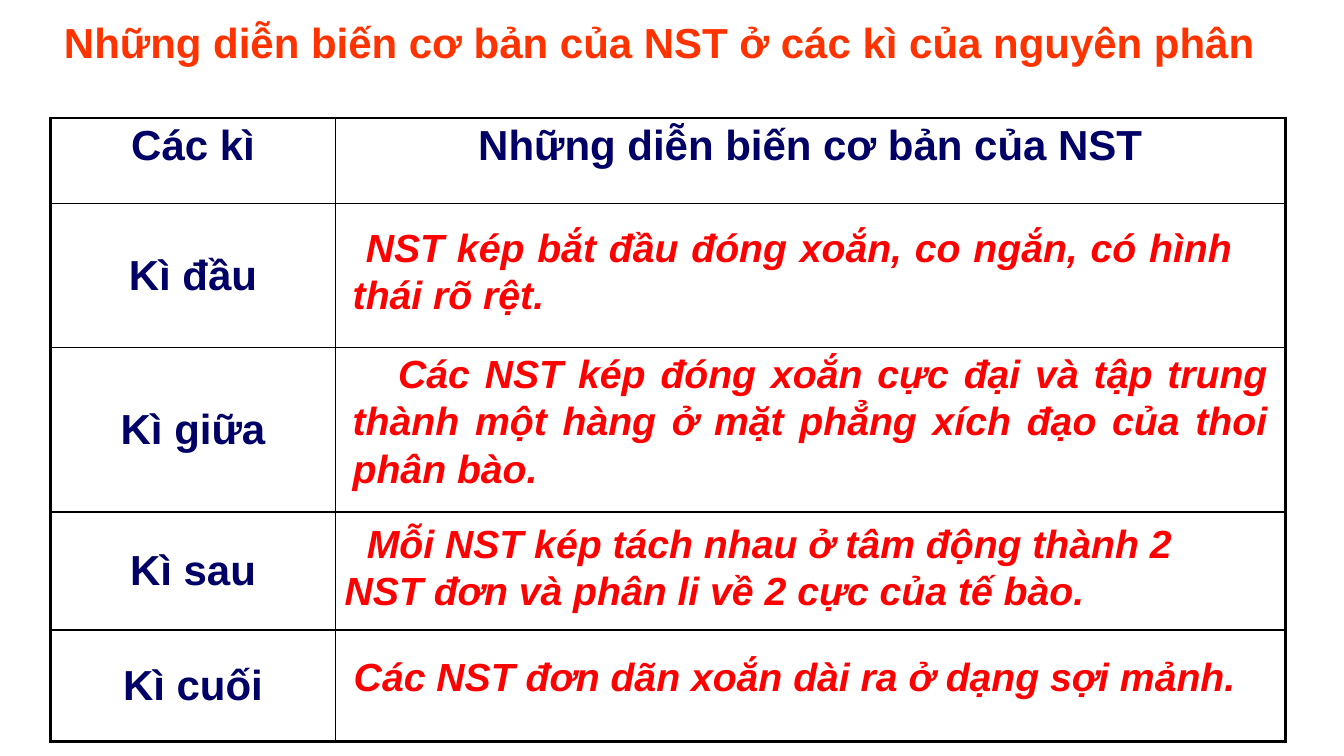
from dataclasses import dataclass

from lxml.etree import SubElement
from pptx import Presentation
from pptx.dml.color import RGBColor as RGB
from pptx.enum.text import MSO_ANCHOR as Anchor, PP_ALIGN as Align
from pptx.oxml.ns import qn
from pptx.util import Inches, Pt


@dataclass(frozen=True)
class Theme:
    font: str = "Arial"
    title: RGB = RGB(0xFF, 0x33, 0x00)
    label: RGB = RGB(0x00, 0x00, 0x66)
    answer: RGB = RGB(0xFF, 0x00, 0x00)
    border: str = "000000"
    large: float = 30
    medium: float = 28
    thick: float = 2.25
    thin: float = 1


class SlideBuilder:
    def __init__(self, prs, theme):
        self.theme = theme
        self.s = prs.slides.add_slide(prs.slide_layouts[6])

    def style(self, p, size, color, align, italic=False):
        p.alignment = align
        f = p.font
        f.name, f.size, f.bold, f.italic = self.theme.font, Pt(size), True, italic
        f.color.rgb = color

    def textbox(self, box, text, size, color, align, italic=False, indent=0, spacing=None):
        tf = self.s.shapes.add_textbox(*map(Inches, box)).text_frame
        tf.word_wrap = True
        p = tf.paragraphs[0]
        p.text = text
        p.line_spacing = spacing
        if indent:
            p._p.get_or_add_pPr().set("indent", str(Inches(indent)))
        self.style(p, size, color, align, italic)

    def title(self, box, text):
        self.textbox(box, text, self.theme.large, self.theme.title, Align.CENTER, spacing=0.9)

    def answer(self, box, text, indent, align=Align.JUSTIFY):
        self.textbox(box, text, self.theme.medium, self.theme.answer, align, True, indent)

    def border(self, cell, side, width):
        ln = SubElement(cell._tc.get_or_add_tcPr(), qn(f"a:ln{side}"), w=str(Pt(width)))
        fill = SubElement(ln, qn("a:solidFill"))
        SubElement(fill, qn("a:srgbClr"), val=self.theme.border)

    def table(self, box, widths, heights, rows):
        t = self.theme
        last_row, last_col = len(heights) - 1, len(widths) - 1
        table = self.s.shapes.add_table(len(heights), len(widths), *map(Inches, box)).table
        for column, width in zip(table.columns, widths):
            column.width = Inches(width)
        for i, (row, height) in enumerate(zip(rows, heights)):
            table.rows[i].height = Inches(height)
            for j, text in enumerate(row):
                cell = table.cell(i, j)
                cell.vertical_anchor = Anchor.MIDDLE if i else Anchor.TOP
                outer = {"L": j == 0, "R": j == last_col, "T": i == 0, "B": i == last_row}
                for side, is_outer in outer.items():
                    self.border(cell, side, t.thick if is_outer else t.thin)
                cell.fill.background()
                p = cell.text_frame.paragraphs[0]
                p.text = text
                self.style(p, t.large, t.label, Align.CENTER)


def main():
    prs = Presentation()
    prs.slide_width, prs.slide_height = Inches(13.33), Inches(7.5)
    slide = SlideBuilder(prs, Theme())

    slide.title((0.42, 0.17, 12.25, 0.76),
                "Những diễn biến cơ bản của NST ở các kì của nguyên phân")
    slide.table(
        (0.5, 1.17, 12.25, 6.2), (2.83, 9.42), (0.85, 1.43, 1.63, 1.17, 1.11),
        [("Các kì", "Những diễn biến cơ bản của NST"),
         ("Kì đầu", ""), ("Kì giữa", ""), ("Kì sau", ""), ("Kì cuối", "")])

    slide.answer((3.4, 2.17, 8.92, 1.04),
                 "NST kép bắt đầu đóng xoắn, co ngắn, có hình thái rõ rệt.", 0.13)
    slide.answer((3.4, 3.42, 9.27, 1.51),
                 "Các NST kép đóng xoắn cực đại và tập trung thành một hàng "
                 "ở mặt phẳng xích đạo của thoi phân bào.", 0.45)
    slide.answer((3.32, 5.1, 9.11, 1.04),
                 "Mỗi NST kép tách nhau ở tâm động thành 2 NST đơn "
                 "và phân li về 2 cực của tế bào.", 0.22, Align.LEFT)
    slide.answer((3.3, 6.42, 9.11, 0.57),
                 "Các NST đơn dãn xoắn dài ra ở dạng sợi mảnh.", 0.11)

    prs.save("out.pptx")


if __name__ == "__main__":
    main()
